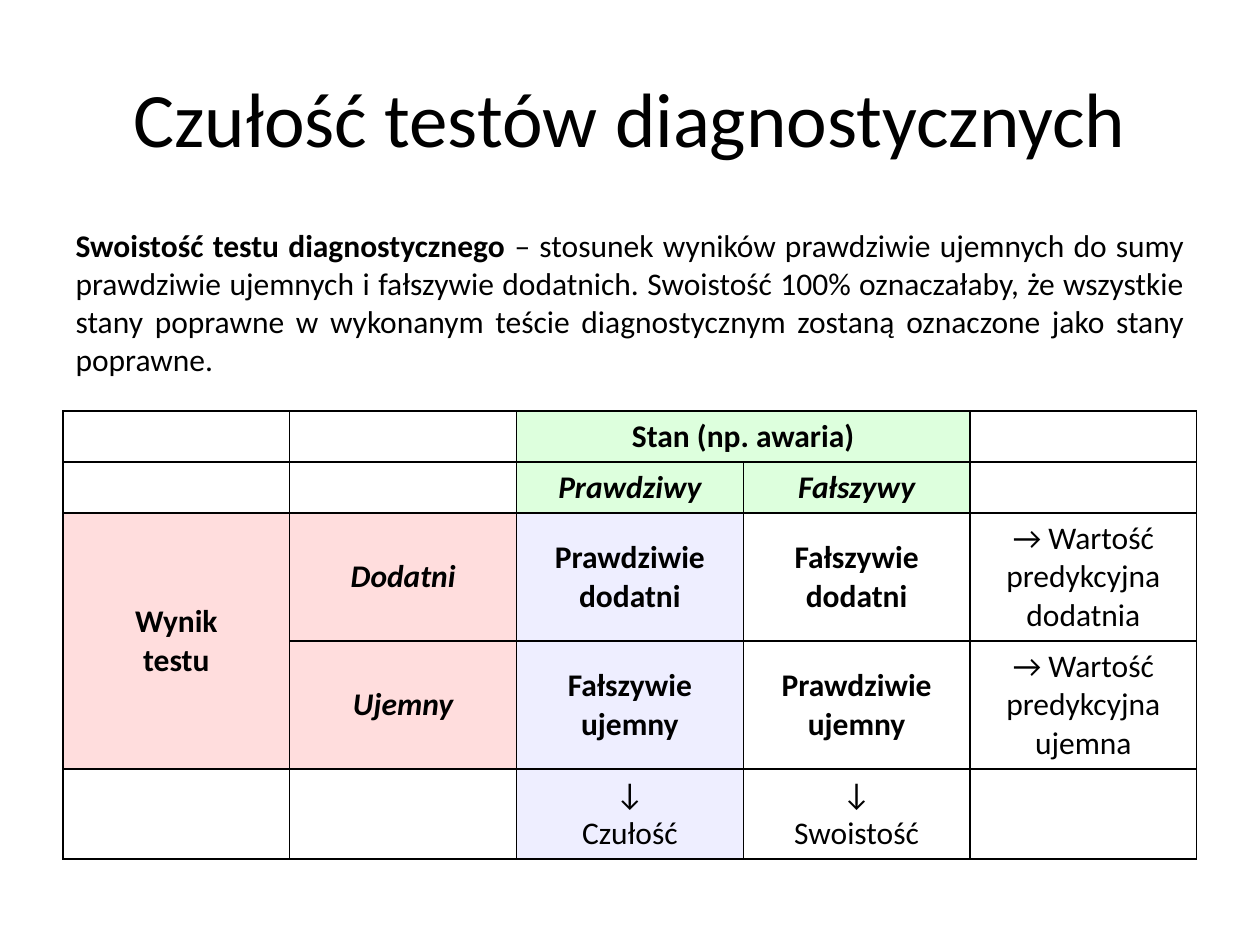
import pptx
import pptx.util
import pptx.oxml
import pptx.oxml.ns
import pptx.dml.color
import pptx.enum.text
from lxml import etree

RGB = pptx.dml.color.RGBColor
ALIGN = pptx.enum.text.PP_ALIGN
ANCHOR = pptx.enum.text.MSO_ANCHOR
BLACK = RGB(0x00, 0x00, 0x00)
WHITE = RGB(0xFF, 0xFF, 0xFF)
GREEN = RGB(0xDD, 0xFF, 0xDD)
PINK = RGB(0xFF, 0xDD, 0xDD)
LILAC = RGB(0xEE, 0xEE, 0xFF)
FONT = "Calibri"
PX = 914400 // 126

# Content
TITLE = "Czułość testów diagnostycznych"
TERM = "Swoistość testu diagnostycznego "
DEFINITION = (
    "– stosunek wyników prawdziwie ujemnych do sumy prawdziwie ujemnych "
    "i fałszywie dodatnich. Swoistość 100% oznaczałaby, że wszystkie stany "
    "poprawne w wykonanym teście diagnostycznym zostaną oznaczone jako stany "
    "poprawne.")

# Cell styles: fill, bold, italic
BLANK = (WHITE, False, False)
STATE = (GREEN, True, False)
STATE_VALUE = (GREEN, True, True)
RESULT = (PINK, True, False)
RESULT_VALUE = (PINK, True, True)
FIRST = (LILAC, True, False)
SECOND = (WHITE, True, False)
MEASURE = (LILAC, False, False)
EMPTY = ("", BLANK)
ROWS = [
    [EMPTY, EMPTY, ("Stan (np. awaria)", STATE), ("", STATE), EMPTY],
    [EMPTY, EMPTY, ("Prawdziwy", STATE_VALUE), ("Fałszywy", STATE_VALUE), EMPTY],
    [("Wynik\vtestu", RESULT), ("Dodatni", RESULT_VALUE),
     ("Prawdziwie dodatni", FIRST), ("Fałszywie dodatni", SECOND),
     ("→ Wartość predykcyjna dodatnia", BLANK)],
    [("", RESULT), ("Ujemny", RESULT_VALUE),
     ("Fałszywie ujemny", FIRST), ("Prawdziwie ujemny", SECOND),
     ("→ Wartość predykcyjna ujemna", BLANK)],
    [EMPTY, EMPTY, ("↓\vCzułość", MEASURE), ("↓\vSwoistość", BLANK), EMPTY],
]
MERGES = [((0, 2), (0, 3)), ((2, 0), (3, 0))]
ROW_HEIGHTS = [51, 51, 128, 128, 90]
LEFT, WIDTH, TABLE_TOP = 63, 1134, 411


def place(shape, top, height):
    shape.left, shape.top = LEFT * PX, top * PX
    shape.width, shape.height = WIDTH * PX, height * PX


def style(span, size, bold=False, italic=False):
    span.font.name = FONT
    span.font.size = pptx.util.Pt(size)
    span.font.bold, span.font.italic = bold, italic
    span.font.color.rgb = BLACK


def add_borders(cell):
    properties = cell._tc.get_or_add_tcPr()
    for position, side in enumerate(("lnL", "lnR", "lnT", "lnB")):
        properties.insert(position, pptx.oxml.parse_xml(
            f'<a:{side} {pptx.oxml.ns.nsdecls("a")} w="12700"><a:solidFill>'
            f'<a:srgbClr val="{BLACK}"/></a:solidFill></a:{side}>'))


deck = pptx.Presentation()
deck.slide_width, deck.slide_height = 1260 * PX, 945 * PX
page = deck.slides.add_slide(deck.slide_layouts[1])

# Title
title = page.shapes.title
place(title, 38, 158)
title.text_frame.text = TITLE
title.text_frame.vertical_anchor = ANCHOR.MIDDLE
para = title.text_frame.paragraphs[0]
para.alignment = ALIGN.CENTER
style(para.runs[0], 44)

# Definition, justified and without a bullet
body = page.placeholders[1]
place(body, 220, 624)
para = body.text_frame.paragraphs[0]
para.alignment = ALIGN.JUSTIFY
for words, bold in ((TERM, True), (DEFINITION, False)):
    span = para.add_run()
    span.text = words
    style(span, 18, bold)
settings = para._p.get_or_add_pPr()
settings.set("marL", "0")
settings.set("indent", "0")
etree.SubElement(settings, pptx.oxml.ns.qn("a:buNone"))

# Table of test results
frame = page.shapes.add_table(
    len(ROWS), len(ROWS[0]), LEFT * PX, TABLE_TOP * PX,
    WIDTH * PX, sum(ROW_HEIGHTS) * PX)
table = frame.table
table.first_row = table.horz_banding = False
for column in table.columns:
    column.width = WIDTH * PX // len(ROWS[0])
for row, height in zip(table.rows, ROW_HEIGHTS):
    row.height = height * PX
for row_index, row in enumerate(ROWS):
    for column_index, (words, (fill, bold, italic)) in enumerate(row):
        cell = table.cell(row_index, column_index)
        cell.fill.solid()
        cell.fill.fore_color.rgb = fill
        cell.vertical_anchor = ANCHOR.MIDDLE
        add_borders(cell)
        if words:
            cell.text_frame.text = words
            para = cell.text_frame.paragraphs[0]
            para.alignment = ALIGN.CENTER
            for span in para.runs:
                style(span, 18, bold, italic)
for start, end in MERGES:
    table.cell(*start).merge(table.cell(*end))

deck.save("out.pptx")
